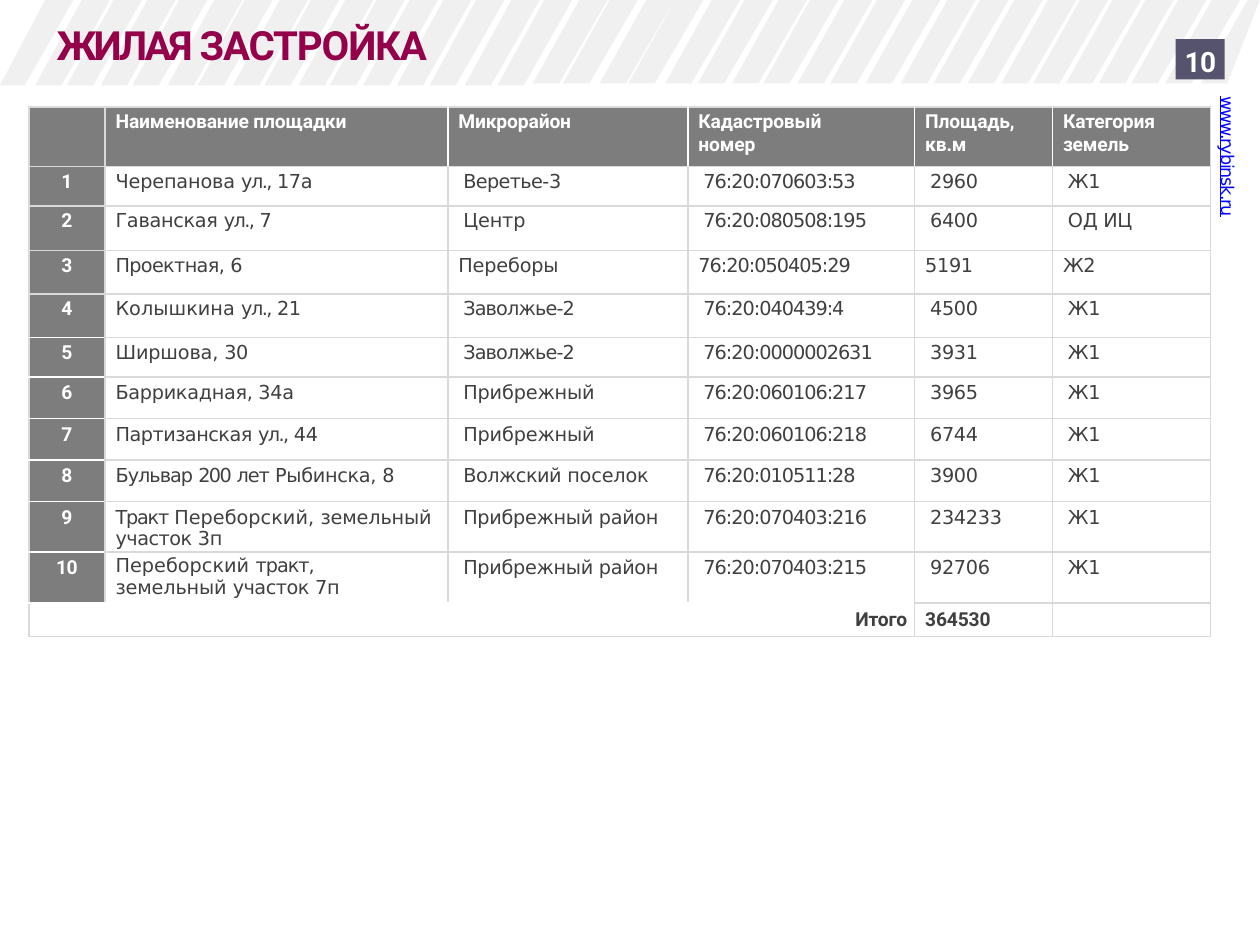
from lxml.etree import SubElement
from pptx import Presentation
from pptx.dml.color import RGBColor
from pptx.enum.shapes import MSO_SHAPE
from pptx.enum.text import MSO_ANCHOR, PP_ALIGN
from pptx.oxml.ns import qn
from pptx.util import Cm, Pt

HUES = {
    "title": "940049", "head": "7D7D7D", "grid": "D9D9D9", "white": "FFFFFF",
    "text": "404040", "link": "0000FF", "badge": "55536D", "stripe": "F0F0F0",
}
SANS, BOLD = "DejaVu Sans", "Roboto"
WIDE = 25.4

STRIPES = [
    0.91, 1.65, 2.29, 2.97, 3.61, 4.32, 4.93, 5.64, 6.27, 6.96, 7.59, 8.26, 8.94,
    9.6, 10.31, 10.97, 11.68, 12.29, 13.03, 13.61, 14.35, 15.01, 15.7, 16.33,
    17.02, 17.68, 18.39, 19.1, 19.76, 20.45, 21.13, 21.77, 22.43, 23.09, 23.75,
    24.43, 25.15,
]
COLS = [1.54, 6.91, 4.84, 4.57, 2.78, 3.18]
ROWS = [1.2, 0.79, 0.9, 0.88, 0.87, 0.8, 0.84, 0.83, 0.84, 1.02, 1.03, 0.67]
HEADS = ["", "Наименование площадки", "Микрорайон", "Кадастровый номер",
         "Площадь, кв.м", "Категория земель"]

# A run is (text, letter spacing in points).
STREET = ("ул., ", -0.9)
ZAVOL = [("Заволжье-2", -0.5)]
COAST = [("Прибрежный", -0.1)]
AREA = [("Прибрежный район", -0.2)]
SITES = [
    ([("Черепанова ", -0.1), STREET, ("17а", -0.2)],
     [("Веретье-", -0.4), ("3", -0.5)], "76:20:070603:53", "2960", "Ж1"),
    ([("Гаванская ", -0.2), STREET, ("7", -0.5)],
     [("Центр", -0.1)], "76:20:080508:195", "6400", "ОД ИЦ"),
    ([("Проектная, ", -0.4), ("6", -0.5)],
     [("Переборы", -0.1)], "76:20:050405:29", "5191", "Ж2"),
    ([("Колышкина ", 0), STREET, ("21", -0.2)],
     ZAVOL, "76:20:040439:4", "4500", "Ж1"),
    ([("Ширшова, ", -0.1), ("30", -0.3)],
     ZAVOL, "76:20:0000002631", "3931", "Ж1"),
    ([("Баррикадная, 34а", -0.2)], COAST, "76:20:060106:217", "3965", "Ж1"),
    ([("Партизанская ", -0.3), STREET, ("44", -0.2)],
     COAST, "76:20:060106:218", "6744", "Ж1"),
    ([("Бульвар ", -0.6), ("200 ", -0.9), ("лет ", -0.6), ("Рыбинска, ", -0.2),
      ("8", -0.5)],
     [("Волжский ", -0.3), ("поселок", -0.1)], "76:20:010511:28", "3900", "Ж1"),
    ([("Тракт ", -0.7), ("Переборский, ", 0), ("земельный", -0.1)],
     AREA, "76:20:070403:216", "234233", "Ж1"),
    ([("Переборский ", 0), ("тракт, ", -0.6), ("земельный ", -0.1),
      ("участок ", -0.3), ("7п", -0.2)],
     AREA, "76:20:070403:215", "92706", "Ж1"),
]
TAIL = [("участок ", -0.3), ("3п", -0.2)]


def color(name):
    return RGBColor.from_string(HUES[name])


def paint(fill, name):
    fill.solid()
    fill.fore_color.rgb = color(name)


def write(para, runs, size, face, hue, before=2.5, align=PP_ALIGN.LEFT):
    """Fill a paragraph with (text, spacing) runs in one font."""
    para.alignment = align
    para.space_before = Pt(before)
    font = para.font
    font.size, font.name, font.bold = Pt(size), face, face == BOLD
    font.color.rgb = color(hue)
    for text, gap in runs:
        run = para.add_run()
        run.text = text
        run._r.get_or_add_rPr().set("spc", str(round(gap * 100)))


def inset(item, left, top, right=0):
    item.margin_left, item.margin_top = Cm(left), Cm(top)
    item.margin_right, item.margin_bottom = Cm(right), 0


def add_text(slide, box, runs, left, *style):
    frame = slide.shapes.add_textbox(*map(Cm, box)).text_frame
    frame.word_wrap = True
    inset(frame, left, 0.03)
    write(frame.paragraphs[0], runs, *style)
    return frame


def add_band(slide):
    """Draw the slanted header stripes as one outline, cut at the slide edges."""
    pen = None
    for x in STRIPES:
        deep = 1.72 if x < 11 else 1.68
        edge = [(x + 0.57, 0), (x, 0), (x - 0.94, deep), (x - 0.41, deep)]
        edge = [(Cm(min(max(px, 0), WIDE)), Cm(py)) for px, py in edge]
        if pen is None:
            pen = slide.shapes.build_freeform(*edge[0])
        else:
            pen.move_to(*edge[0])
        pen.add_line_segments(edge[1:], close=True)
    band = pen.convert_to_shape()
    band.shadow.inherit = False
    paint(band.fill, "stripe")
    band.line.fill.background()


def add_badge(slide):
    badge = slide.shapes.add_shape(
        MSO_SHAPE.RECTANGLE, Cm(23.7), Cm(0.79), Cm(0.99), Cm(0.81))
    badge.shadow.inherit = False
    paint(badge.fill, "badge")
    badge.line.fill.background()
    frame = badge.text_frame
    frame.vertical_anchor = MSO_ANCHOR.TOP
    inset(frame, 0.18, 0.1)
    write(frame.paragraphs[0], [("10", -0.2)], 16, BOLD, "white", 3)


def is_white(row, col, side):
    """Tell which cell edges are white rather than grey."""
    last = len(ROWS) - 1
    if side == "L":
        return row == 0 and col > 1
    if side == "R":
        return row == 0 and 0 < col < 5
    if side == "T":
        return (col == 0 and row > 4) or (row == last and col < 4)
    return (col == 0 and 4 <= row < last) or (row == last - 1 and col < 4)


def add_edges(cell, row, col):
    props = cell._tc.get_or_add_tcPr()
    for side in "LRTB":
        line = SubElement(props, qn("a:ln" + side), w=str(Pt(1)))
        fill = SubElement(line, qn("a:solidFill"))
        hue = "white" if is_white(row, col, side) else "grid"
        SubElement(fill, qn("a:srgbClr"), val=HUES[hue])


def style_cell(cell, row, col):
    add_edges(cell, row, col)
    if row == 0 or (col == 0 and row < len(ROWS) - 1):
        paint(cell.fill, "head")
    else:
        cell.fill.background()
    inset(cell, 0.21, 0.08 if row < 6 else 0.1)
    cell.text_frame.paragraphs[0]._p.get_or_add_endParaRPr().set("sz", "1100")


def fill_site(table, row, site):
    name, zone, code, size, kind = site
    mark = table.cell(row, 0)
    mark.margin_left = 0
    write(mark.text_frame.paragraphs[0], [(str(row), -0.3)], 11, BOLD, "white",
          align=PP_ALIGN.CENTER)
    cells = [name, zone, [(code, -0.6)], [(size, -0.2)], [(kind, -0.2)]]
    for col, runs in enumerate(cells, 1):
        cell = table.cell(row, col)
        if col > 1 and row != 3:
            cell.margin_left = Cm(0.31)
        write(cell.text_frame.paragraphs[0], runs, 11, SANS, "text")


def add_grid(slide):
    table = slide.shapes.add_table(
        len(ROWS), len(COLS), Cm(0.58), Cm(2.16), Cm(sum(COLS)), Cm(sum(ROWS))).table
    table.first_row = table.horz_banding = False
    for col, wide in enumerate(COLS):
        table.columns[col].width = Cm(wide)
    for row, tall in enumerate(ROWS):
        table.rows[row].height = Cm(tall)
        for col in range(len(COLS)):
            style_cell(table.cell(row, col), row, col)
    for col, text in enumerate(HEADS):
        if text:
            para = table.cell(0, col).text_frame.paragraphs[0]
            write(para, [(text, -0.1)], 11, BOLD, "white")
    table.cell(0, 3).margin_right = Cm(1)
    for row, site in enumerate(SITES, 1):
        fill_site(table, row, site)
    more = table.cell(9, 1).text_frame.add_paragraph()
    write(more, TAIL, 11, SANS, "text", 0)
    more.line_spacing = Pt(12.3)
    inset(table.cell(10, 1), 0.21, 0.05, 1)

    total = table.cell(11, 0)
    total.merge(table.cell(11, 3))
    total.margin_right = Cm(0.15)
    write(total.text_frame.paragraphs[0], [("Итого", -0.1)], 11, BOLD, "text",
          align=PP_ALIGN.RIGHT)
    write(table.cell(11, 4).text_frame.paragraphs[0], [("364530", -0.1)], 11, BOLD,
          "text")


def main():
    deck = Presentation()
    deck.slide_width, deck.slide_height = Cm(WIDE), Cm(19.05)
    slide = deck.slides.add_slide(deck.slide_layouts[6])
    add_band(slide)
    link = add_text(slide, (24.46, 1.91, 0.51, 2.59), [("www.rybinsk.ru", -0.6)],
                    0.03, 10, SANS, "link", 1)
    link._txBody.bodyPr.set("vert", "vert")
    link.paragraphs[0].font.underline = True
    add_text(slide, (0.91, 0.38, 17.98, 1.63),
             [("ЖИЛАЯ ", -1.8), ("ЗАСТРОЙКА", -0.7)], 0.23, 23, BOLD, "title", 1.1)
    add_grid(slide)
    add_badge(slide)
    deck.save("out.pptx")


if __name__ == "__main__":
    main()
